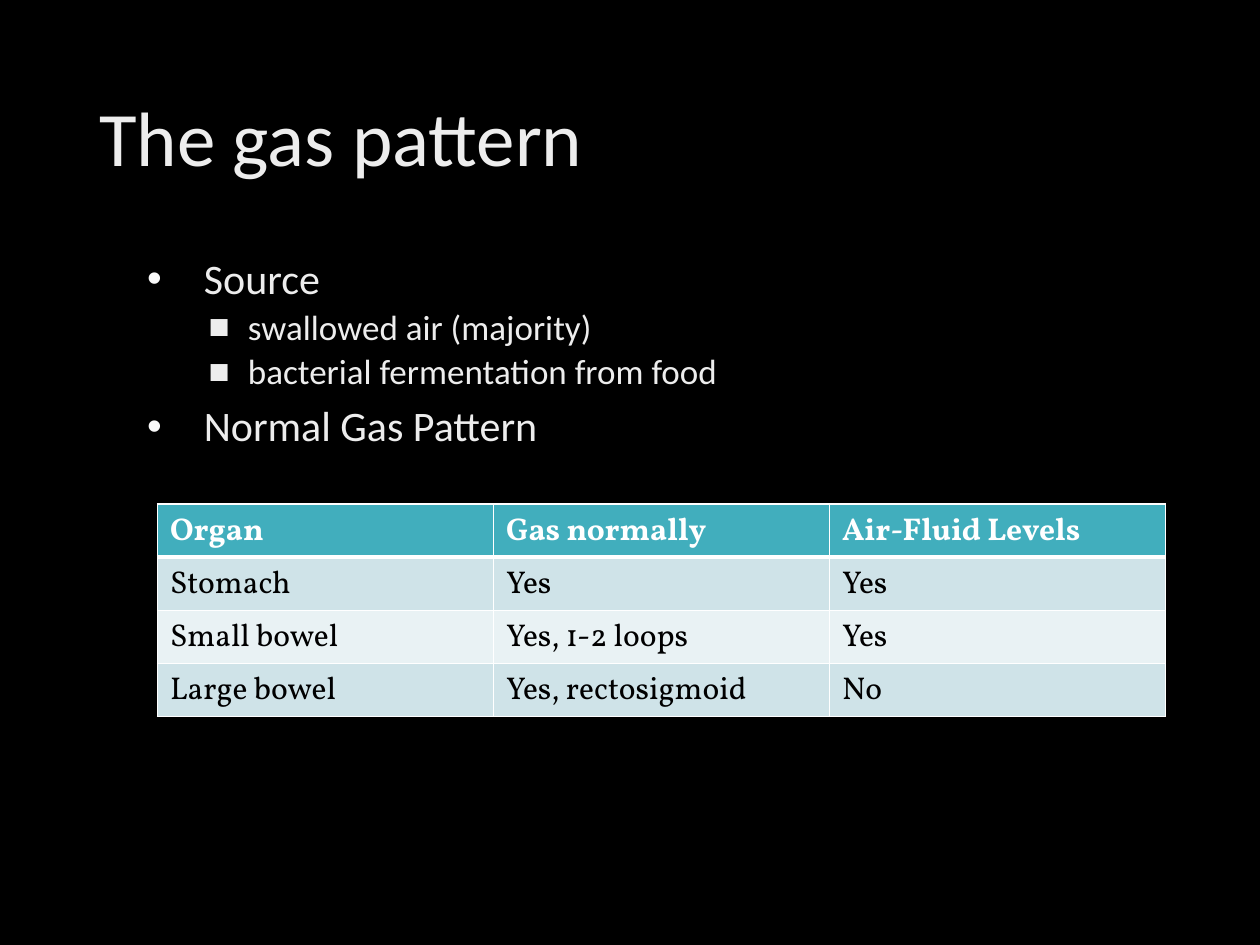
from lxml import etree
from pptx import Presentation
from pptx.dml.color import RGBColor
from pptx.enum.text import MSO_ANCHOR
from pptx.oxml.ns import qn
from pptx.util import Pt

MIDDLE, TOP = MSO_ANCHOR.MIDDLE, MSO_ANCHOR.TOP

# Content
TITLE = "The gas pattern"
OUTLINE = [
    (0, "Source"),
    (1, "swallowed air (majority)"),
    (1, "bacterial fermentation from food"),
    (0, "Normal Gas Pattern"),
]
ORGANS = [
    ("Organ", "Gas normally", "Air-Fluid Levels"),
    ("Stomach", "Yes", "Yes"),
    ("Small bowel", "Yes, 1-2 loops", "Yes"),
    ("Large bowel", "Yes, rectosigmoid", "No"),
]

THEME = {
    "background": "000000", "text": "EDEDED",
    "header": "41AEBD", "bands": ("CFE3E8", "E9F2F4"),
    "header_text": "FFFFFF", "cell_text": "000000", "border": "FFFFFF",
    "text_font": "Calibri", "table_font": "Vollkorn",
    "title_size": 44, "table_size": 18, "line_spacing": 0.9,
}
# One entry per outline level, lengths in points
LEVELS = [
    {"size": 24, "margin": 43.2, "hang": 32.4, "before": 7.5,
     "bullet": "•", "bullet_color": "F9F9F9"},
    {"size": 20, "margin": 68.4, "hang": 22.5, "before": 3.8,
     "bullet": "■", "bullet_color": THEME["text"]},
]

# Left, top, width, height in points
TITLE_AREA = (49.7, 28.8, 620.6, 104.4)
OUTLINE_AREA = (66.2, 144, 604.1, 342.7)
TABLE_AREA = (90, 288, 576, 121.6)
THIN, THICK = 1, 3


def add_text_area(slide, area, anchor):
    frame = slide.shapes.add_textbox(*map(Pt, area)).text_frame
    frame.word_wrap = True
    frame.vertical_anchor = anchor
    return frame


def add_run(paragraph, text, font, size, color, bold=False):
    run = paragraph.add_run()
    run.text = text
    run.font.name = font
    run.font.size = Pt(size)
    run.font.bold = bold
    run.font.color.rgb = RGBColor.from_string(color)


def set_bullet(paragraph, level):
    props = paragraph._p.get_or_add_pPr()
    props.set("marL", str(Pt(level["margin"])))
    props.set("indent", str(-Pt(level["hang"])))
    color = etree.SubElement(props, qn("a:buClr"))
    etree.SubElement(color, qn("a:srgbClr"), val=level["bullet_color"])
    etree.SubElement(props, qn("a:buFont"), typeface="Arial")
    etree.SubElement(props, qn("a:buChar"), char=level["bullet"])


def set_borders(cell, widths):
    props = cell._tc.get_or_add_tcPr()
    for side, width in widths.items():
        line = etree.SubElement(props, qn(f"a:ln{side}"), w=str(Pt(width)))
        fill = etree.SubElement(line, qn("a:solidFill"))
        etree.SubElement(fill, qn("a:srgbClr"), val=THEME["border"])


def add_title(slide):
    paragraph = add_text_area(slide, TITLE_AREA, MIDDLE).paragraphs[0]
    paragraph.line_spacing = THEME["line_spacing"]
    add_run(paragraph, TITLE, THEME["text_font"], THEME["title_size"], THEME["text"])


def add_outline(slide):
    frame = add_text_area(slide, OUTLINE_AREA, TOP)
    for index, (depth, text) in enumerate(OUTLINE):
        level = LEVELS[depth]
        paragraph = frame.add_paragraph() if index else frame.paragraphs[0]
        paragraph.level = depth
        set_bullet(paragraph, level)
        paragraph.line_spacing = THEME["line_spacing"]
        paragraph.space_before = Pt(level["before"] if index else 0)
        add_run(paragraph, text, THEME["text_font"], level["size"], THEME["text"])


def add_organ_table(slide):
    table = slide.shapes.add_table(
        len(ORGANS), len(ORGANS[0]), *map(Pt, TABLE_AREA)).table
    for row, values in enumerate(ORGANS):
        is_header = row == 0
        fill = THEME["header"] if is_header else THEME["bands"][(row - 1) % 2]
        color = THEME["header_text"] if is_header else THEME["cell_text"]
        # The thick rule lies between the header and the first organ
        widths = {"L": THIN, "R": THIN,
                  "T": THICK if row == 1 else THIN,
                  "B": THICK if is_header else THIN}
        for column, text in enumerate(values):
            cell = table.cell(row, column)
            set_borders(cell, widths)
            cell.fill.solid()
            cell.fill.fore_color.rgb = RGBColor.from_string(fill)
            add_run(cell.text_frame.paragraphs[0], text, THEME["table_font"],
                    THEME["table_size"], color, bold=is_header)


def main():
    deck = Presentation()
    deck.slide_width, deck.slide_height = Pt(720), Pt(540)
    slide = deck.slides.add_slide(deck.slide_layouts[6])
    slide.background.fill.solid()
    slide.background.fill.fore_color.rgb = RGBColor.from_string(THEME["background"])
    add_title(slide)
    add_outline(slide)
    add_organ_table(slide)
    deck.save("out.pptx")


if __name__ == "__main__":
    main()
